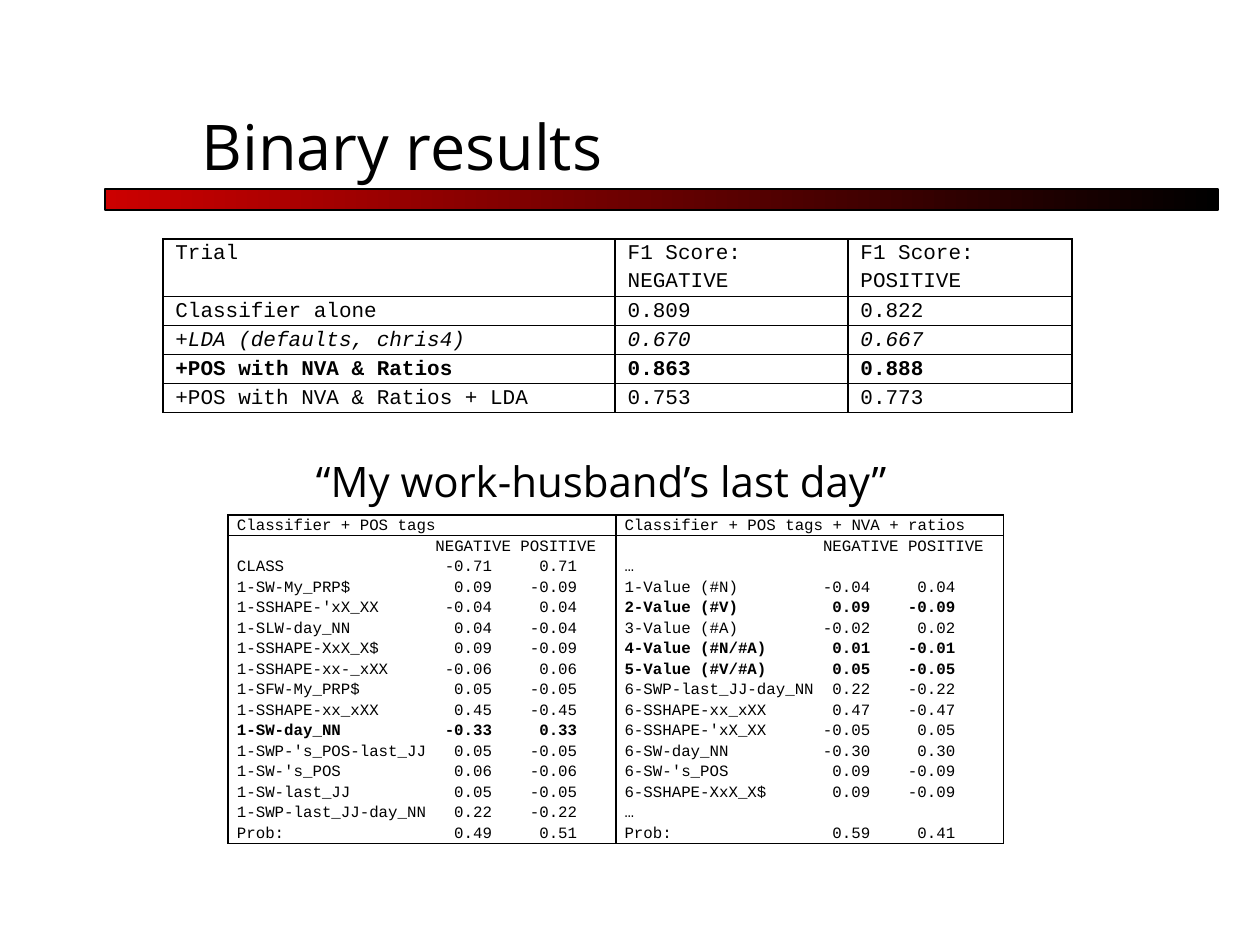
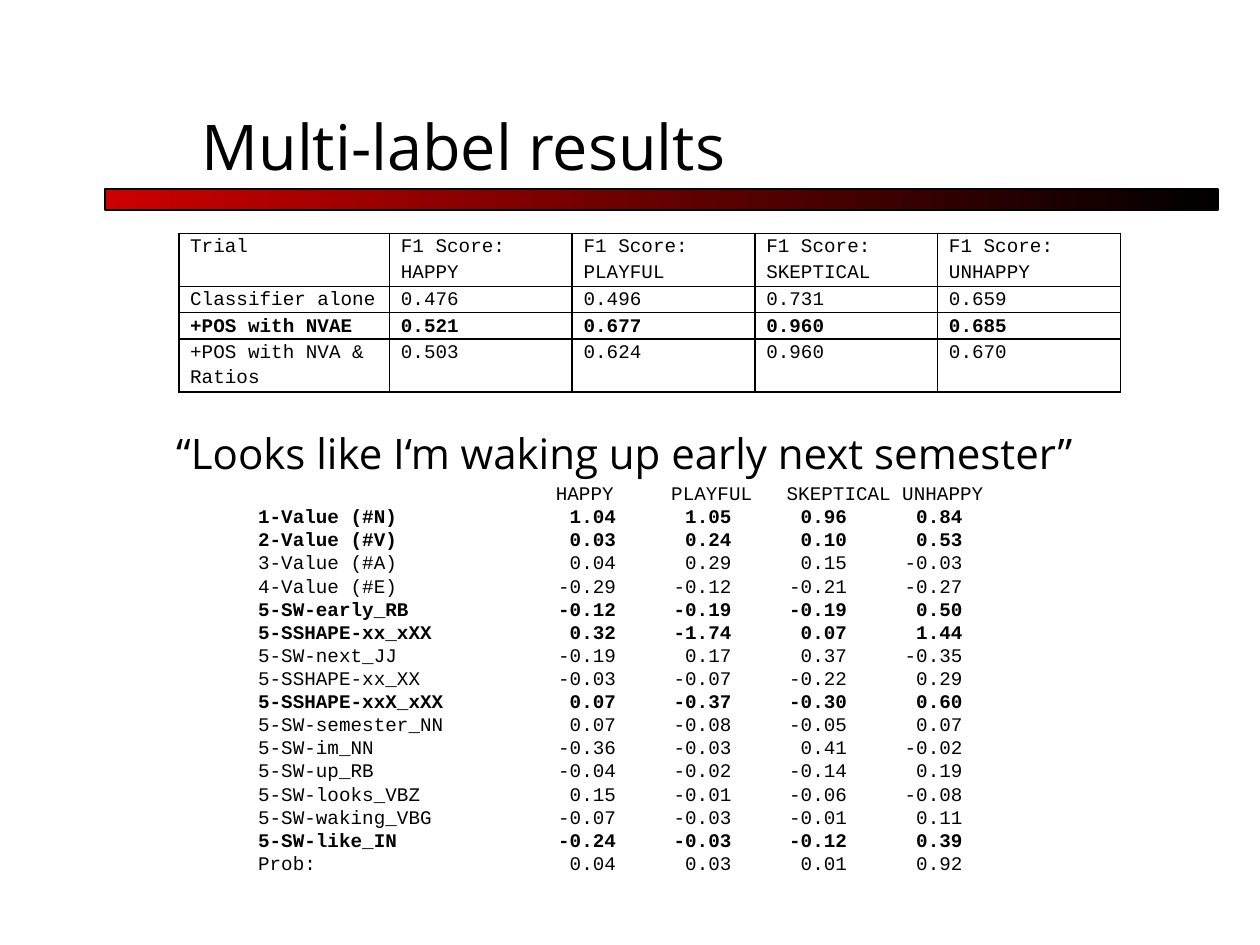
from lxml import etree
from pptx import Presentation
from pptx.dml.color import RGBColor
from pptx.enum.shapes import MSO_SHAPE
from pptx.enum.text import MSO_ANCHOR, MSO_AUTO_SIZE, PP_ALIGN
from pptx.oxml.ns import qn
from pptx.util import Pt

RECTANGLE = MSO_SHAPE.RECTANGLE
BOTTOM = MSO_ANCHOR.BOTTOM
LEFT = PP_ALIGN.LEFT
FIXED_SIZE = MSO_AUTO_SIZE.NONE

RED = RGBColor(0xCC, 0x00, 0x00)
BLACK = RGBColor(0x00, 0x00, 0x00)
HEADING_FONT = "Open Sans"
MONO_FONT = "Courier New"
TITLE_ONLY = 5
CELL_SPACING = 1.15

BINARY_TRIALS = [
    ("Classifier alone", 0.809, 0.822),
    ("+LDA (defaults, chris4)", 0.670, 0.667),
    ("+POS with NVA & Ratios", 0.863, 0.888),
    ("+POS with NVA & Ratios + LDA", 0.753, 0.773),
]
MULTI_TRIALS = [
    ("Classifier alone", 0.476, 0.496, 0.731, 0.659),
    ("+POS with NVAE", 0.521, 0.677, 0.960, 0.685),
    ("+POS with NVA & Ratios", 0.503, 0.624, 0.960, 0.670),
]
POS_WEIGHTS = [
    ("CLASS", -0.71, 0.71),
    ("1-SW-My_PRP$", 0.09, -0.09),
    ("1-SSHAPE-'xX_XX", -0.04, 0.04),
    ("1-SLW-day_NN", 0.04, -0.04),
    ("1-SSHAPE-XxX_X$", 0.09, -0.09),
    ("1-SSHAPE-xx-_xXX", -0.06, 0.06),
    ("1-SFW-My_PRP$", 0.05, -0.05),
    ("1-SSHAPE-xx_xXX", 0.45, -0.45),
    ("1-SW-day_NN", -0.33, 0.33),
    ("1-SWP-'s_POS-last_JJ", 0.05, -0.05),
    ("1-SW-'s_POS", 0.06, -0.06),
    ("1-SW-last_JJ", 0.05, -0.05),
    ("1-SWP-last_JJ-day_NN", 0.22, -0.22),
    ("Prob:", 0.49, 0.51),
]
RATIO_WEIGHTS = [
    ("…",),
    ("1-Value (#N)", -0.04, 0.04),
    ("2-Value (#V)", 0.09, -0.09),
    ("3-Value (#A)", -0.02, 0.02),
    ("4-Value (#N/#A)", 0.01, -0.01),
    ("5-Value (#V/#A)", 0.05, -0.05),
    ("6-SWP-last_JJ-day_NN", 0.22, -0.22),
    ("6-SSHAPE-xx_xXX", 0.47, -0.47),
    ("6-SSHAPE-'xX_XX", -0.05, 0.05),
    ("6-SW-day_NN", -0.30, 0.30),
    ("6-SW-'s_POS", 0.09, -0.09),
    ("6-SSHAPE-XxX_X$", 0.09, -0.09),
    ("…",),
    ("Prob:", 0.59, 0.41),
]
MOOD_WEIGHTS = [
    ("1-Value (#N)", 1.04, 1.05, 0.96, 0.84),
    ("2-Value (#V)", 0.03, 0.24, 0.10, 0.53),
    ("3-Value (#A)", 0.04, 0.29, 0.15, -0.03),
    ("4-Value (#E)", -0.29, -0.12, -0.21, -0.27),
    ("5-SW-early_RB", -0.12, -0.19, -0.19, 0.50),
    ("5-SSHAPE-xx_xXX", 0.32, -1.74, 0.07, 1.44),
    ("5-SW-next_JJ", -0.19, 0.17, 0.37, -0.35),
    ("5-SSHAPE-xx_XX", -0.03, -0.07, -0.22, 0.29),
    ("5-SSHAPE-xxX_xXX", 0.07, -0.37, -0.30, 0.60),
    ("5-SW-semester_NN", 0.07, -0.08, -0.05, 0.07),
    ("5-SW-im_NN", -0.36, -0.03, 0.41, -0.02),
    ("5-SW-up_RB", -0.04, -0.02, -0.14, 0.19),
    ("5-SW-looks_VBZ", 0.15, -0.01, -0.06, -0.08),
    ("5-SW-waking_VBG", -0.07, -0.03, -0.01, 0.11),
    ("5-SW-like_IN", -0.24, -0.03, -0.12, 0.39),
    ("Prob:", 0.04, 0.03, 0.01, 0.92),
]
BINARY_LABELS = ("NEGATIVE", "POSITIVE")
MOOD_LABELS = ("HAPPY", "PLAYFUL", "SKEPTICAL", "UNHAPPY")


def write(paragraph, text, font, size, bold=False, italic=False):
    paragraph.text = text
    paragraph.alignment = LEFT
    for run in paragraph.runs:
        run.font.name = font
        run.font.size = Pt(size)
        run.font.bold = bold
        run.font.italic = italic
        run.font.color.rgb = BLACK


def add_right_tabs(paragraph, stops):
    tabs = etree.SubElement(paragraph._p.get_or_add_pPr(), qn("a:tabLst"))
    for stop in stops:
        etree.SubElement(tabs, qn("a:tab"), pos=str(int(Pt(stop))), algn="r")


def write_weights(frame, labels, weights, bold, size, spacing, label_ends, value_ends):
    char_width = size * 0.6
    lines = [("", *labels)] + weights
    for index, (feature, *values) in enumerate(lines):
        paragraph = frame.add_paragraph() if index else frame.paragraphs[0]
        shown = [f"{value:.2f}" for value in values] if index else values
        write(paragraph, "\t".join([feature, *shown]), MONO_FONT, size, feature in bold)
        paragraph.line_spacing = spacing
        ends = value_ends if index else label_ends
        add_right_tabs(paragraph, [end * char_width for end in ends])


def frame_cell(cell, inset):
    cell.margin_left = cell.margin_right = Pt(inset)
    cell.margin_top = cell.margin_bottom = 0
    properties = cell._tc.get_or_add_tcPr()
    for side in ("lnL", "lnR", "lnT", "lnB"):
        border = etree.SubElement(properties, qn(f"a:{side}"), w=str(int(Pt(1))))
        fill = etree.SubElement(border, qn("a:solidFill"))
        etree.SubElement(fill, qn("a:srgbClr"), val=str(BLACK))
    cell.fill.background()


def add_grid(slide, left, top, widths, heights, inset):
    grid = slide.shapes.add_table(len(heights), len(widths), Pt(left), Pt(top),
                                  Pt(sum(widths)), Pt(sum(heights))).table
    grid.first_row = grid.horz_banding = False
    for column, width in zip(grid.columns, widths):
        column.width = Pt(width)
    for row, height in zip(grid.rows, heights):
        row.height = Pt(height)
    for cell in grid.iter_cells():
        frame_cell(cell, inset)
    return grid


def write_cell(cell, text, size, bold=False, italic=False):
    paragraph = cell.text_frame.paragraphs[0]
    write(paragraph, text, MONO_FONT, size, bold, italic)
    paragraph.line_spacing = CELL_SPACING


def add_f1_table(slide, left, top, widths, heights, inset, size, labels, trials,
                 best, worst=None):
    grid = add_grid(slide, left, top, widths, heights, inset)
    lines = [("Trial", *(f"F1 Score: {label}" for label in labels))]
    lines += [(trial, *(f"{score:.3f}" for score in scores)) for trial, *scores in trials]
    for row, line in enumerate(lines):
        for column, text in enumerate(line):
            write_cell(grid.cell(row, column), text, size,
                       line[0] == best, line[0] == worst)


def add_weight_comparison(slide, left, top):
    size = 9
    grid = add_grid(slide, left, top, [221.5, 221.5], [11.7, 175.8], 5)
    comparisons = [
        ("Classifier + POS tags", POS_WEIGHTS, {"1-SW-day_NN"}, (27, 36)),
        ("Classifier + POS tags + NVA + ratios", RATIO_WEIGHTS,
         {"2-Value (#V)", "4-Value (#N/#A)", "5-Value (#V/#A)"}, (26, 35)),
    ]
    for column, (heading, weights, bold, value_ends) in enumerate(comparisons):
        write_cell(grid.cell(0, column), heading, size)
        write_weights(grid.cell(1, column).text_frame, BINARY_LABELS, weights, bold,
                      size, CELL_SPACING, (29, 38), value_ends)


def add_mood_weights(slide, left, top, width, height):
    frame = slide.shapes.add_textbox(Pt(left), Pt(top), Pt(width), Pt(height)).text_frame
    frame.word_wrap = True
    bold = {"1-Value (#N)", "2-Value (#V)", "5-SW-early_RB", "5-SSHAPE-xx_xXX",
            "5-SSHAPE-xxX_xXX", "5-SW-like_IN"}
    write_weights(frame, MOOD_LABELS, MOOD_WEIGHTS, bold, 11, Pt(13.2),
                  (30.8, 42.8, 54.8, 62.8), (31, 41, 51, 61))


def add_quote(slide, text, left, top, width):
    frame = slide.shapes.add_textbox(Pt(left), Pt(top), Pt(width), Pt(36)).text_frame
    frame.word_wrap = False
    write(frame.paragraphs[0], text, HEADING_FONT, 24)


def add_results_slide(deck, heading):
    slide = deck.slides.add_slide(deck.slide_layouts[TITLE_ONLY])
    title = slide.shapes.title
    title.left, title.top, title.width, title.height = Pt(108), Pt(30), Pt(612), Pt(78)
    title.text_frame.vertical_anchor = BOTTOM
    title.text_frame.auto_size = FIXED_SIZE
    write(title.text_frame.paragraphs[0], heading, HEADING_FONT, 36)

    band = slide.shapes.add_shape(RECTANGLE, Pt(60), Pt(108), Pt(636), Pt(12))
    band.shadow.inherit = False
    band.fill.gradient()
    band.fill.gradient_angle = 0
    for stop, color in zip(band.fill.gradient_stops, (RED, BLACK)):
        stop.color.rgb = color
    band.line.color.rgb = BLACK
    band.line.width = Pt(0.75)
    return slide


def add_binary_slide(deck):
    slide = add_results_slide(deck, "Binary results")
    add_f1_table(slide, 93, 136.5, [258.5, 133, 128], [33.1] + [16.56] * 4, 7.2, 12,
                 BINARY_LABELS, BINARY_TRIALS,
                 "+POS with NVA & Ratios", "+LDA (defaults, chris4)")
    add_weight_comparison(slide, 130.4, 294.4)
    add_quote(slide, "“My work-husband’s last day”", 173.5, 257, 366)


def add_multi_label_slide(deck):
    slide = add_results_slide(deck, "Multi-label results")
    add_f1_table(slide, 102.2, 133.4, [120.4] + [104.4] * 4, [30.2, 15.1, 15.1, 30.2],
                 6.5, 11, MOOD_LABELS, MULTI_TRIALS, "+POS with NVAE")
    add_mood_weights(slide, 140.4, 271.5, 479.5, 234)
    add_quote(slide, "“Looks like I‘m waking up early next semester”", 93.6, 240.5, 565)


def main():
    deck = Presentation()
    deck.slide_width, deck.slide_height = Pt(720), Pt(540)
    add_binary_slide(deck)
    add_multi_label_slide(deck)
    deck.save("out.pptx")


if __name__ == "__main__":
    main()
